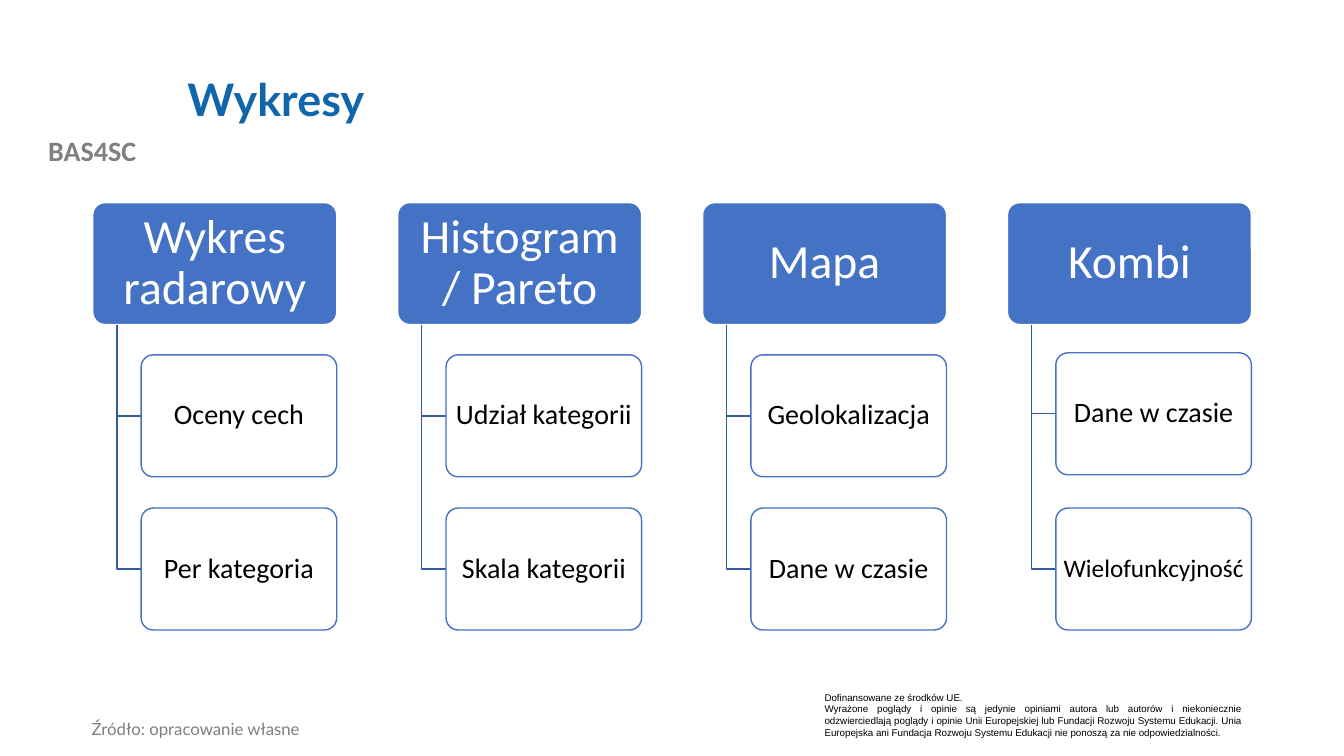
"""Build the slide on chart types with four small hierarchies."""
from dataclasses import dataclass

from lxml import etree
from pptx import Presentation
from pptx.dml.color import RGBColor
from pptx.enum.shapes import MSO_SHAPE
from pptx.enum.text import MSO_ANCHOR, PP_ALIGN
from pptx.oxml.ns import qn
from pptx.shapes.autoshape import Shape
from pptx.slide import Slide
from pptx.util import Inches, Pt

ROUND = MSO_SHAPE.ROUNDED_RECTANGLE
TOP, MIDDLE = MSO_ANCHOR.TOP, MSO_ANCHOR.MIDDLE
LEFT, CENTER, JUSTIFY = PP_ALIGN.LEFT, PP_ALIGN.CENTER, PP_ALIGN.JUSTIFY
BLUE, WHITE, BLACK, NAVY = "4472C4", "FFFFFF", "000000", "365B9D"
START, STEP, HEAD_TOP = 0.92, 3.024, 2.01
HEAD_W, LEAF_W, BOX_H = 2.42, 1.94, 1.21
HEAD_PAD, LEAF_PAD = 0.07, 0.03
STEM, INDENT = 0.24, 0.48


@dataclass
class Style:
    size: float
    color: str
    font: str = "Calibri"
    bold: bool = False
    align: PP_ALIGN = CENTER
    anchor: MSO_ANCHOR = MIDDLE
    space: float = 0.9


@dataclass
class Label:
    text: str
    x: float
    y: float
    w: float
    h: float
    style: Style


@dataclass
class Leaf:
    text: str
    y: float
    size: float = 20


@dataclass
class Branch:
    head: str
    leaves: list[Leaf]


LABELS = [
    Label("BAS4SC", 0, 1.28, 1.83, 0.44,
          Style(20, "808080", bold=True, anchor=TOP, space=1)),
    Label("Dofinansowane ze środków UE.\n"
          "Wyrażone poglądy i opinie są jedynie opiniami autora lub autorów "
          "i niekoniecznie odzwierciedlają poglądy i opinie Unii Europejskiej "
          "lub Fundacji Rozwoju Systemu Edukacji. Unia Europejska ani Fundacja "
          "Rozwoju Systemu Edukacji nie ponoszą za nie odpowiedzialności.",
          8.08, 6.81, 4.33, 0.57,
          Style(7, BLACK, "Arial", align=JUSTIFY, anchor=TOP, space=1)),
    Label("Wykresy", 1.76, 0.4, 10.66, 1.22,
          Style(32, "1065AB", "Lato", True, LEFT)),
    Label("Źródło: opracowanie własne", 0.81, 7.1, 5.01, 0.31,
          Style(12, "7F7F7F", "Lato", align=LEFT, anchor=TOP)),
]

BRANCHES = [
    Branch("Wykres radarowy",
           [Leaf("Oceny cech", 3.52), Leaf("Per kategoria", 5.04)]),
    Branch("Histogram / Pareto",
           [Leaf("Udział kategorii", 3.52), Leaf("Skala kategorii", 5.04)]),
    Branch("Mapa",
           [Leaf("Geolokalizacja", 3.52), Leaf("Dane w czasie", 5.04)]),
    Branch("Kombi",
           [Leaf("Dane w czasie", 3.5), Leaf("Wielofunkcyjność", 5.04, 18)]),
]


def rgb(code: str) -> RGBColor:
    return RGBColor.from_string(code)


def write(shape: Shape, text: str, style: Style) -> None:
    frame = shape.text_frame
    frame.word_wrap = True
    frame.vertical_anchor = style.anchor
    frame.text = text
    for para in frame.paragraphs:
        para.alignment = style.align
        para.line_spacing = style.space
        para.font.size = Pt(style.size)
        para.font.name = style.font
        para.font.bold = style.bold
        para.font.color.rgb = rgb(style.color)


def add_label(slide: Slide, label: Label) -> None:
    spot = map(Inches, (label.x, label.y, label.w, label.h))
    write(slide.shapes.add_textbox(*spot), label.text, label.style)


def add_box(slide: Slide, label: Label, fill: str, line: str,
            pad: float) -> Shape:
    spot = map(Inches, (label.x, label.y, label.w, label.h))
    box = slide.shapes.add_shape(ROUND, *spot)
    box.adjustments[0] = 0.1
    box.shadow.inherit = False
    box.fill.solid()
    box.fill.fore_color.rgb = rgb(fill)
    box.line.color.rgb = rgb(line)
    box.line.width = Pt(1)
    frame = box.text_frame
    frame.margin_left = frame.margin_right = Inches(pad)
    frame.margin_top = frame.margin_bottom = Inches(pad)
    write(box, label.text, label.style)
    return box


def fade(box: Shape, share: int) -> None:
    tint = box.fill._xPr.find(qn("a:solidFill"))[0]
    etree.SubElement(tint, qn("a:alpha")).set("val", str(share * 1000))


def add_stem(slide: Slide, x: float, top: float, end: float) -> None:
    pen = slide.shapes.build_freeform(Inches(x), Inches(top))
    pen.add_line_segments([(Inches(x), Inches(end)),
                           (Inches(x + STEM), Inches(end))], close=False)
    stem = pen.convert_to_shape()
    stem.shadow.inherit = False
    stem.fill.background()
    stem.line.color.rgb = rgb(NAVY)
    stem.line.width = Pt(1)


def add_branch(slide: Slide, x: float, branch: Branch) -> None:
    head = Label(branch.head, x, HEAD_TOP, HEAD_W, BOX_H, Style(34, WHITE))
    add_box(slide, head, BLUE, WHITE, HEAD_PAD)
    for leaf in branch.leaves:
        add_stem(slide, x + STEM, HEAD_TOP + BOX_H, leaf.y + BOX_H / 2)
        label = Label(leaf.text, x + INDENT, leaf.y, LEAF_W, BOX_H,
                      Style(leaf.size, BLACK))
        fade(add_box(slide, label, WHITE, BLUE, LEAF_PAD), 90)


def main() -> None:
    deck = Presentation()
    deck.slide_width, deck.slide_height = Inches(13.33), Inches(7.5)
    slide = deck.slides.add_slide(deck.slide_layouts[6])
    for label in LABELS:
        add_label(slide, label)
    for col, branch in enumerate(BRANCHES):
        add_branch(slide, START + col * STEP, branch)
    deck.save("out.pptx")


if __name__ == "__main__":
    main()
